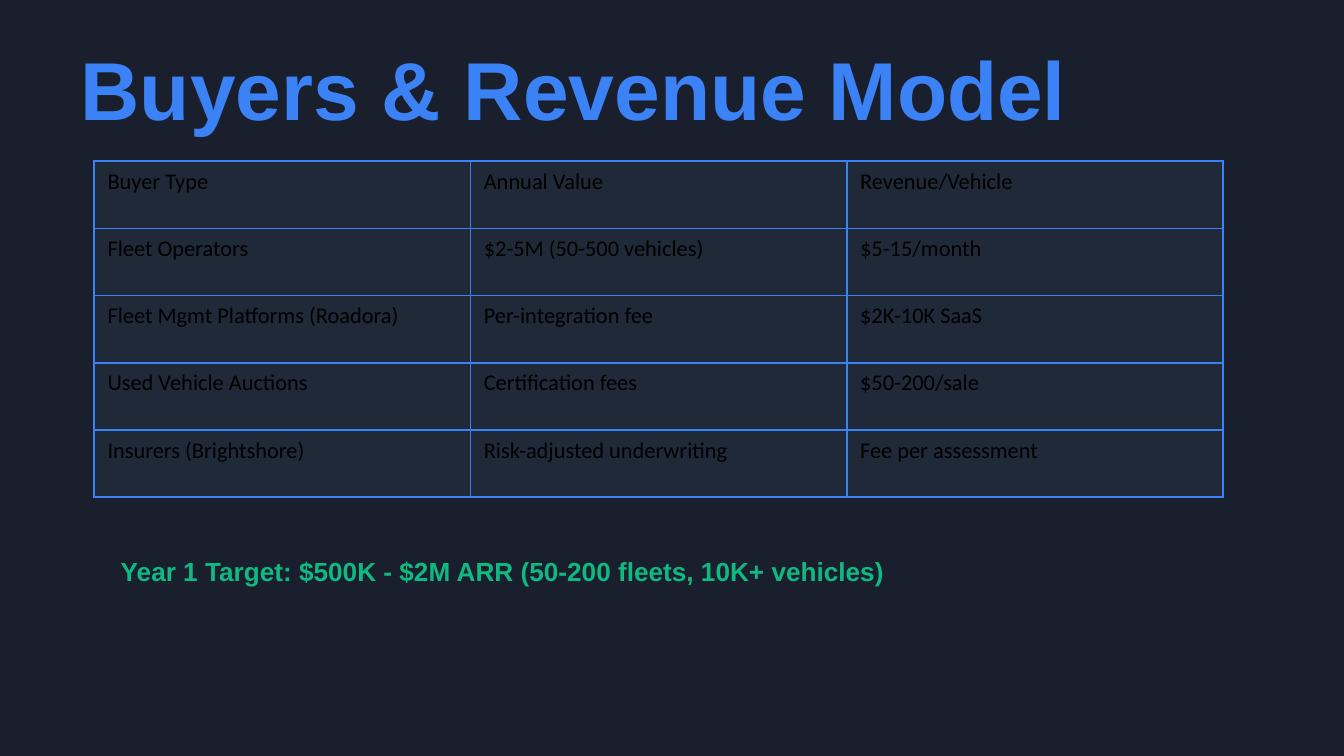
from lxml import etree
from pptx import Presentation
from pptx.dml.color import RGBColor
from pptx.enum.text import MSO_ANCHOR, MSO_AUTO_SIZE, PP_ALIGN
from pptx.oxml.ns import qn
from pptx.util import Pt

PX = 4572  # EMU per px, 200 px to the inch
LEFT = PP_ALIGN.LEFT
MIDDLE = MSO_ANCHOR.MIDDLE
NO_FIT = MSO_AUTO_SIZE.NONE
TITLE_ONLY = 5

COLORS = {
    "background": "1A1F2E",
    "blue": "3B82F6",
    "green": "10B981",
    "cell": "1F2937",
    "cell_text": "000000",
}

# Content
TITLE = "Buyers & Revenue Model"
ROWS = [
    ("Buyer Type", "Annual Value", "Revenue/Vehicle"),
    ("Fleet Operators", "$2-5M (50-500 vehicles)", "$5-15/month"),
    ("Fleet Mgmt Platforms (Roadora)", "Per-integration fee", "$2K-10K SaaS"),
    ("Used Vehicle Auctions", "Certification fees", "$50-200/sale"),
    ("Insurers (Brightshore)", "Risk-adjusted underwriting", "Fee per assessment"),
]
TARGET = "Year 1 Target: $500K - $2M ARR (50-200 fleets, 10K+ vehicles)"

# Layout in px
SLIDE = (2000, 1125)
TITLE_BOX = (100, 80, 1800, 100)
TABLE_AT = (140, 240)
COL_W, ROW_H = 560, 100
TARGET_BOX = (160, 800, 1680, 100)


def emu(*lengths):
    return [n * PX for n in lengths]


def rgb(name):
    return RGBColor.from_string(COLORS[name])


def style(p, font, size, color, bold=False):
    p.alignment = LEFT
    for r in p.runs:
        r.font.name = font
        r.font.size = Pt(size)
        r.font.bold = bold
        r.font.color.rgb = rgb(color)


def set_line(sp, text, size, color):
    tf = sp.text_frame
    tf.text = text
    tf.word_wrap = True
    tf.auto_size = NO_FIT
    tf.vertical_anchor = MIDDLE
    style(tf.paragraphs[0], "Arial", size, color, bold=True)


def set_borders(cell, color, width):
    tc_pr = cell._tc.get_or_add_tcPr()
    for i, side in enumerate(("a:lnL", "a:lnR", "a:lnT", "a:lnB")):
        ln = etree.Element(qn(side), w=str(Pt(width)))
        fill = etree.SubElement(ln, qn("a:solidFill"))
        etree.SubElement(fill, qn("a:srgbClr"), val=COLORS[color])
        tc_pr.insert(i, ln)  # borders come before the fill


prs = Presentation()
prs.slide_width, prs.slide_height = emu(*SLIDE)
s = prs.slides.add_slide(prs.slide_layouts[TITLE_ONLY])
s.background.fill.solid()
s.background.fill.fore_color.rgb = rgb("background")

# Title
title = s.shapes.title
title.left, title.top, title.width, title.height = emu(*TITLE_BOX)
set_line(title, TITLE, 44, "blue")

# Buyers table
n_rows, n_cols = len(ROWS), len(ROWS[0])
frame = s.shapes.add_table(
    n_rows, n_cols, *emu(*TABLE_AT, n_cols * COL_W, n_rows * ROW_H))
table = frame.table
table.first_row = False
table.horz_banding = False
for row, texts in enumerate(ROWS):
    for col, text in enumerate(texts):
        cell = table.cell(row, col)
        cell.text = text
        style(cell.text_frame.paragraphs[0], "Calibri", 12, "cell_text")
        cell.fill.solid()
        cell.fill.fore_color.rgb = rgb("cell")
        set_borders(cell, "blue", 1)

# Year 1 target
target = s.shapes.add_textbox(*emu(*TARGET_BOX))
set_line(target, TARGET, 14, "green")

prs.save("out.pptx")
